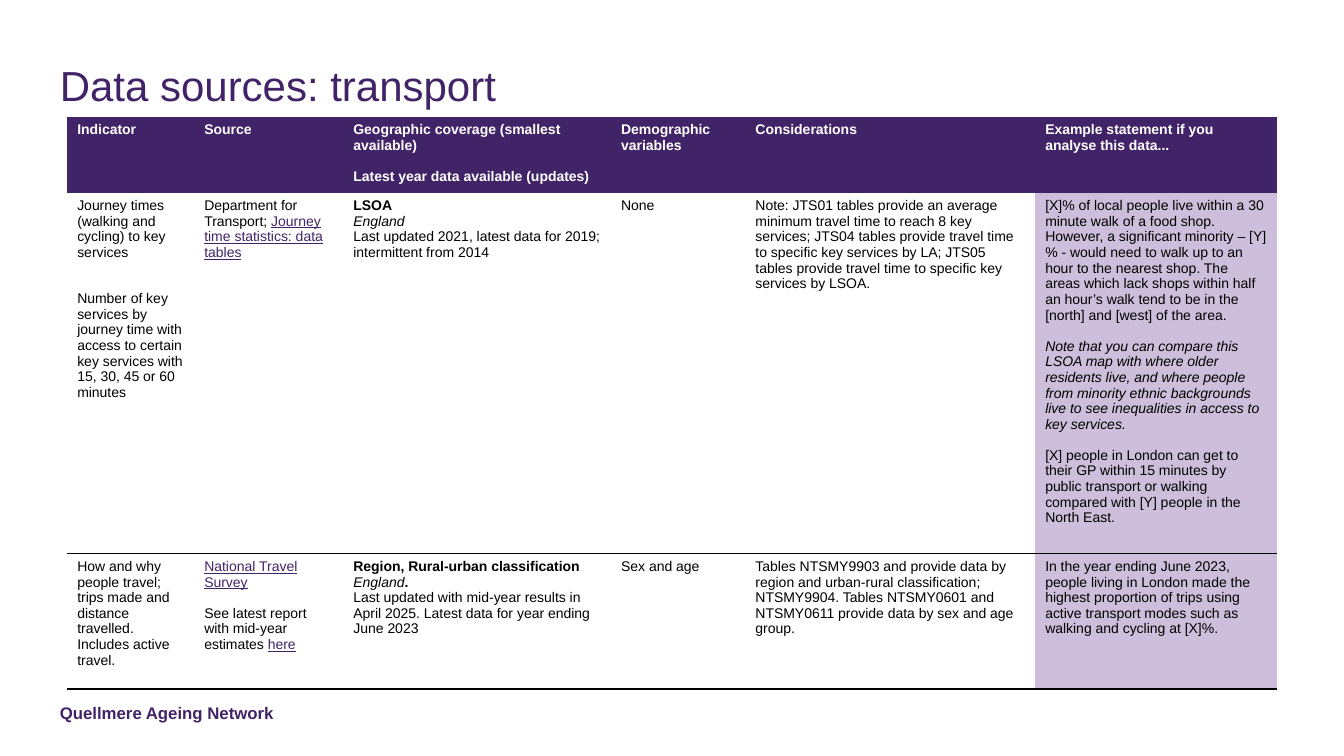
from dataclasses import dataclass

from lxml.etree import SubElement
from pptx import Presentation
from pptx.dml.color import RGBColor
from pptx.enum.text import MSO_ANCHOR
from pptx.oxml.ns import qn
from pptx.util import Emu, Pt

PURPLE = RGBColor(0x41, 0x24, 0x68)
LAVENDER = RGBColor(0xCD, 0xBE, 0xDB)
WHITE = RGBColor(0xFF, 0xFF, 0xFF)
BLACK = RGBColor(0x00, 0x00, 0x00)
FONT = "Arial"
EMU_PER_PX = 9525
BLANK_LAYOUT = 6
LINE_GAP = Pt(11)

COLUMN_WIDTHS = [121, 142, 255, 128, 276, 230]
ROW_HEIGHTS = [69, 70, 252, 129]
CELL_MARGIN_TOP = 5
EXAMPLE_COLUMN = 5


@dataclass
class Words:
    """A stretch of text in one style."""
    text: str
    bold: bool = False
    italic: bool = False
    link: bool = False


@dataclass
class Para:
    """A paragraph, with an optional line of space above it."""
    words: list
    gap: bool = False


def plain(text, gap=False, **style):
    """Return a paragraph in a single style."""
    return Para([Words(text, **style)], gap)


HEADINGS = [
    [plain("Indicator", bold=True)],
    [plain("Source", bold=True)],
    [plain("Geographic coverage (smallest available)", bold=True),
     plain("Latest year data available (updates)", gap=True, bold=True)],
    [plain("Demographic variables", bold=True)],
    [plain("Considerations", bold=True)],
    [plain("Example statement if you analyse this data...", bold=True)],
]
JOURNEY_TIMES = [
    [plain("Journey times (walking and cycling) to key services")],
    [Para([Words("Department for Transport; "),
           Words("Journey time statistics: data tables", link=True)])],
    [plain("LSOA", bold=True),
     plain("England", italic=True),
     plain("Last updated 2021, latest data for 2019; intermittent from 2014")],
    [plain("None")],
    [plain("Note: JTS01 tables provide an average minimum travel time to reach 8 key "
           "services; JTS04 tables provide travel time to specific key services by LA; "
           "JTS05 tables provide travel time to specific key services by LSOA.")],
    [plain("[X]% of local people live within a 30 minute walk of a food shop. However, a "
           "significant minority – [Y]% - would need to walk up to an hour to the nearest "
           "shop. The areas which lack shops within half an hour’s walk tend to be in the "
           "[north] and [west] of the area."),
     plain("Note that you can compare this LSOA map with where older residents live, and "
           "where people from minority ethnic backgrounds live to see inequalities in "
           "access to key services.", gap=True, italic=True),
     plain("[X] people in London can get to their GP within 15 minutes by public transport "
           "or walking compared with [Y] people in the North East.", gap=True)],
]
KEY_SERVICES = [
    [plain("Number of key services by journey time with access to certain key services "
           "with 15, 30, 45 or 60 minutes")],
]
TRAVEL_SURVEY = [
    [plain("How and why people travel; trips made and distance travelled. "
           "Includes active travel.")],
    [plain("National Travel Survey", link=True),
     Para([Words("See latest report with mid-year estimates "),
           Words("here", link=True)], gap=True)],
    [Para([Words("Region, Rural-urban classification ", bold=True),
           Words("England", italic=True), Words(".", bold=True)]),
     plain("Last updated with mid-year results in April 2025. "
           "Latest data for year ending June 2023")],
    [plain("Sex and age")],
    [plain("Tables NTSMY9903 and provide data by region and urban-rural classification; "
           "NTSMY9904. Tables NTSMY0601 and NTSMY0611 provide data by sex and age group.")],
    [plain("In the year ending June 2023, people living in London made the highest "
           "proportion of trips using active transport modes such as walking and cycling "
           "at [X]%.")],
]


def px(length):
    """Turn px into EMU."""
    return Emu(length * EMU_PER_PX)


def style_font(font, words, color):
    """Apply the style of some words to a font."""
    font.bold = words.bold
    font.italic = words.italic
    font.underline = words.link
    font.color.rgb = PURPLE if words.link else color


def write_paragraphs(frame, paras, color):
    """Fill a cell's text frame with styled paragraphs."""
    for index, para in enumerate(paras):
        paragraph = frame.add_paragraph() if index else frame.paragraphs[0]
        paragraph.font.name = FONT
        paragraph.font.size = Pt(10)
        if para.gap:
            paragraph.space_before = LINE_GAP
        style_font(paragraph.font, para.words[0], color)
        for words in para.words:
            run = paragraph.add_run()
            run.text = words.text
            if len(para.words) > 1:
                style_font(run.font, words, color)


def set_borders(cell, top, bottom):
    """Draw black rules of the given point widths and no side borders."""
    properties = cell._tc.get_or_add_tcPr()
    sides = {"a:lnL": 0, "a:lnR": 0, "a:lnT": top, "a:lnB": bottom}
    for position, (tag, width) in enumerate(sides.items()):
        line = SubElement(properties, qn(tag), w=str(Pt(width)))
        if width:
            fill = SubElement(line, qn("a:solidFill"))
            SubElement(fill, qn("a:srgbClr"), val=str(BLACK))
        else:
            SubElement(line, qn("a:noFill"))
        properties.insert(position, line)


def add_line_of_text(slide, left, top, width, height, text, size, bold=False):
    """Add an unpadded purple text box and return its paragraph."""
    frame = slide.shapes.add_textbox(px(left), px(top), px(width), px(height)).text_frame
    frame.word_wrap = True
    frame.margin_left = frame.margin_right = frame.margin_top = frame.margin_bottom = 0
    paragraph = frame.paragraphs[0]
    paragraph.text = text
    paragraph.font.name = FONT
    paragraph.font.size = Pt(size)
    paragraph.font.bold = bold
    paragraph.font.color.rgb = PURPLE
    return paragraph


def add_sources_table(slide, left, top):
    """Add the table of data sources with its corner at left, top."""
    table = slide.shapes.add_table(
        len(ROW_HEIGHTS), len(COLUMN_WIDTHS), px(left), px(top),
        px(sum(COLUMN_WIDTHS)), px(sum(ROW_HEIGHTS))).table
    table.first_row = table.horz_banding = False
    for column, width in zip(table.columns, COLUMN_WIDTHS):
        column.width = px(width)
    for row, height in zip(table.rows, ROW_HEIGHTS):
        row.height = px(height)
    for column in range(1, len(COLUMN_WIDTHS)):
        table.cell(1, column).merge(table.cell(2, column))

    contents = [HEADINGS, JOURNEY_TIMES, KEY_SERVICES, TRAVEL_SURVEY]
    for row, entries in enumerate(contents):
        for column in range(len(COLUMN_WIDTHS)):
            cell = table.cell(row, column)
            cell.vertical_anchor = MSO_ANCHOR.TOP
            cell.margin_top = px(CELL_MARGIN_TOP)
            if row == 0:
                cell.fill.solid()
                cell.fill.fore_color.rgb = PURPLE
            elif column == EXAMPLE_COLUMN:
                cell.fill.solid()
                cell.fill.fore_color.rgb = LAVENDER
            else:
                cell.fill.background()
            merged_bottom = 0.75 if cell.is_merge_origin else 0
            set_borders(cell, top=[0, 0, 0, 0.75][row],
                        bottom=[0, merged_bottom, 0.75, 1][row])
            if column < len(entries):
                write_paragraphs(cell.text_frame, entries[column],
                                 BLACK if row else WHITE)
    table.cell(2, 0).margin_top = px(CELL_MARGIN_TOP) + LINE_GAP


def build_data_sources_slide(presentation):
    """Build the slide of transport data sources."""
    slide = presentation.slides.add_slide(presentation.slide_layouts[BLANK_LAYOUT])
    add_line_of_text(slide, 57, 669, 342, 19, "Quellmere Ageing Network", 12, bold=True)
    title = add_line_of_text(slide, 57, 57, 1166, 108, "Data sources: transport", 30)
    title.line_spacing = Pt(36)
    add_sources_table(slide, 64, 111)


def main():
    """Create and save the presentation."""
    presentation = Presentation()
    presentation.slide_width = px(1280)
    presentation.slide_height = px(720)
    build_data_sources_slide(presentation)
    presentation.save("out.pptx")


if __name__ == "__main__":
    main()
